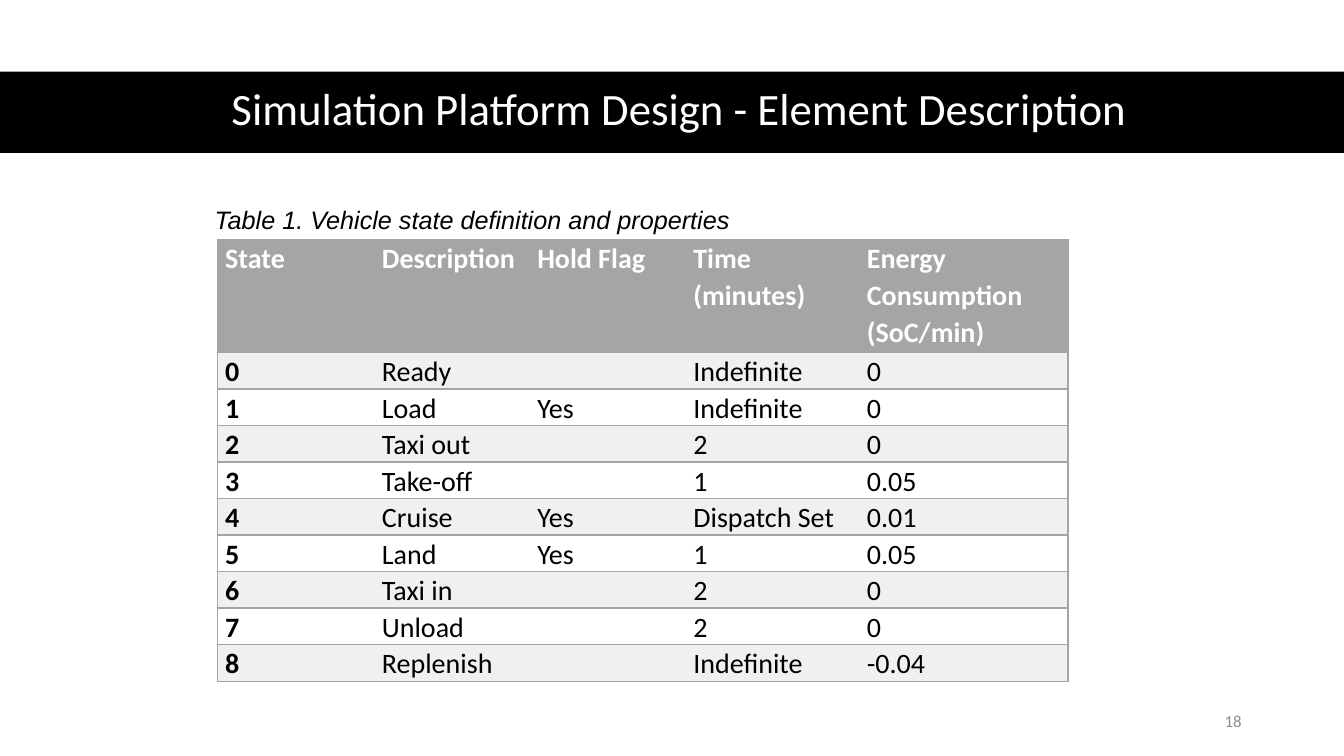
import pptx
import pptx.dml.color
import pptx.enum.shapes
import pptx.enum.text
import pptx.oxml
import pptx.oxml.ns
import pptx.util

Pt = pptx.util.Pt
RGBColor = pptx.dml.color.RGBColor
ALIGN = pptx.enum.text.PP_ALIGN
ANCHOR = pptx.enum.text.MSO_ANCHOR

BLACK = RGBColor(0x00, 0x00, 0x00)
WHITE = RGBColor(0xFF, 0xFF, 0xFF)
GRAY = RGBColor(0xA5, 0xA5, 0xA5)
BAND = RGBColor(0xF0, 0xF0, 0xF0)
NUMBER_GRAY = RGBColor(0x8C, 0x8C, 0x8C)


def add_text(page, bounds, text, font, size, color, align, anchor):
    box = page.shapes.add_textbox(*[Pt(length) for length in bounds])
    box.text_frame.word_wrap = True
    box.text_frame.vertical_anchor = anchor
    para = box.text_frame.paragraphs[0]
    para.text = text
    para.alignment = align
    para.font.name = font
    para.font.size = Pt(size)
    para.font.color.rgb = color
    return para


def add_border(cell, side, visible):
    paint = f'<a:solidFill><a:srgbClr val="{GRAY}"/></a:solidFill>' if visible else "<a:noFill/>"
    cell._tc.get_or_add_tcPr().append(pptx.oxml.parse_xml(
        f'<a:ln{side} {pptx.oxml.ns.nsdecls("a")} w="{Pt(1)}">{paint}</a:ln{side}>'))


deck = pptx.Presentation()
deck.slide_width = Pt(960)
deck.slide_height = Pt(540)
page = deck.slides.add_slide(deck.slide_layouts[6])

title_bar = page.shapes.add_shape(
    pptx.enum.shapes.MSO_SHAPE.RECTANGLE, Pt(0), Pt(51.2), Pt(960), Pt(58))
title_bar.shadow.inherit = False
title_bar.fill.solid()
title_bar.fill.fore_color.rgb = BLACK
title_bar.line.fill.background()

title = add_text(page, (44, 50.5, 882.5, 58), "Simulation Platform Design - Element Description",
                 "Calibri", 32, WHITE, ALIGN.CENTER, ANCHOR.MIDDLE)
title.line_spacing = 0.9

STATES = [
    ("State", "Description", "Hold Flag", "Time (minutes)", "Energy Consumption (SoC/min)"),
    ("0", "Ready", "", "Indefinite", "0"),
    ("1", "Load", "Yes", "Indefinite", "0"),
    ("2", "Taxi out", "", "2", "0"),
    ("3", "Take-off", "", "1", "0.05"),
    ("4", "Cruise", "Yes", "Dispatch Set", "0.01"),
    ("5", "Land", "Yes", "1", "0.05"),
    ("6", "Taxi in", "", "2", "0"),
    ("7", "Unload", "", "2", "0"),
    ("8", "Replenish", "", "Indefinite", "-0.04"),
]
COLUMN_WIDTHS = [112, 111, 111.5, 124, 149]
HEADER_HEIGHT = 80.6
ROW_HEIGHT = 26.1

table = page.shapes.add_table(
    len(STATES), len(COLUMN_WIDTHS), Pt(155.4), Pt(171.2), Pt(sum(COLUMN_WIDTHS)),
    Pt(HEADER_HEIGHT + ROW_HEIGHT * (len(STATES) - 1))).table
for column, width in zip(table.columns, COLUMN_WIDTHS):
    column.width = Pt(width)

for row, values in enumerate(STATES):
    header = row == 0
    table.rows[row].height = Pt(HEADER_HEIGHT if header else ROW_HEIGHT)
    for column, value in enumerate(values):
        cell = table.cell(row, column)
        cell.margin_left = cell.margin_right = Pt(5.4)
        cell.margin_top = cell.margin_bottom = Pt(0)
        add_border(cell, "L", column == 0)
        add_border(cell, "R", column == len(values) - 1)
        add_border(cell, "T", True)
        add_border(cell, "B", True)
        cell.fill.solid()
        cell.fill.fore_color.rgb = GRAY if header else BAND if row % 2 else WHITE
        para = cell.text_frame.paragraphs[0]
        para.text = value
        para.alignment = ALIGN.JUSTIFY
        para.line_spacing = 1.07
        para.font.name = "Calibri"
        para.font.size = Pt(20)
        para.font.bold = header or column == 0
        para.font.color.rgb = WHITE if header else BLACK

caption = add_text(page, (146.2, 142.6, 480, 29), "Table 1. Vehicle state definition and properties",
                   "Arial", 18, BLACK, ALIGN.LEFT, ANCHOR.TOP)
caption.font.italic = True

add_text(page, (678, 500.5, 216, 28.8), "18", "Calibri", 12, NUMBER_GRAY, ALIGN.RIGHT, ANCHOR.MIDDLE)

deck.save("out.pptx")
